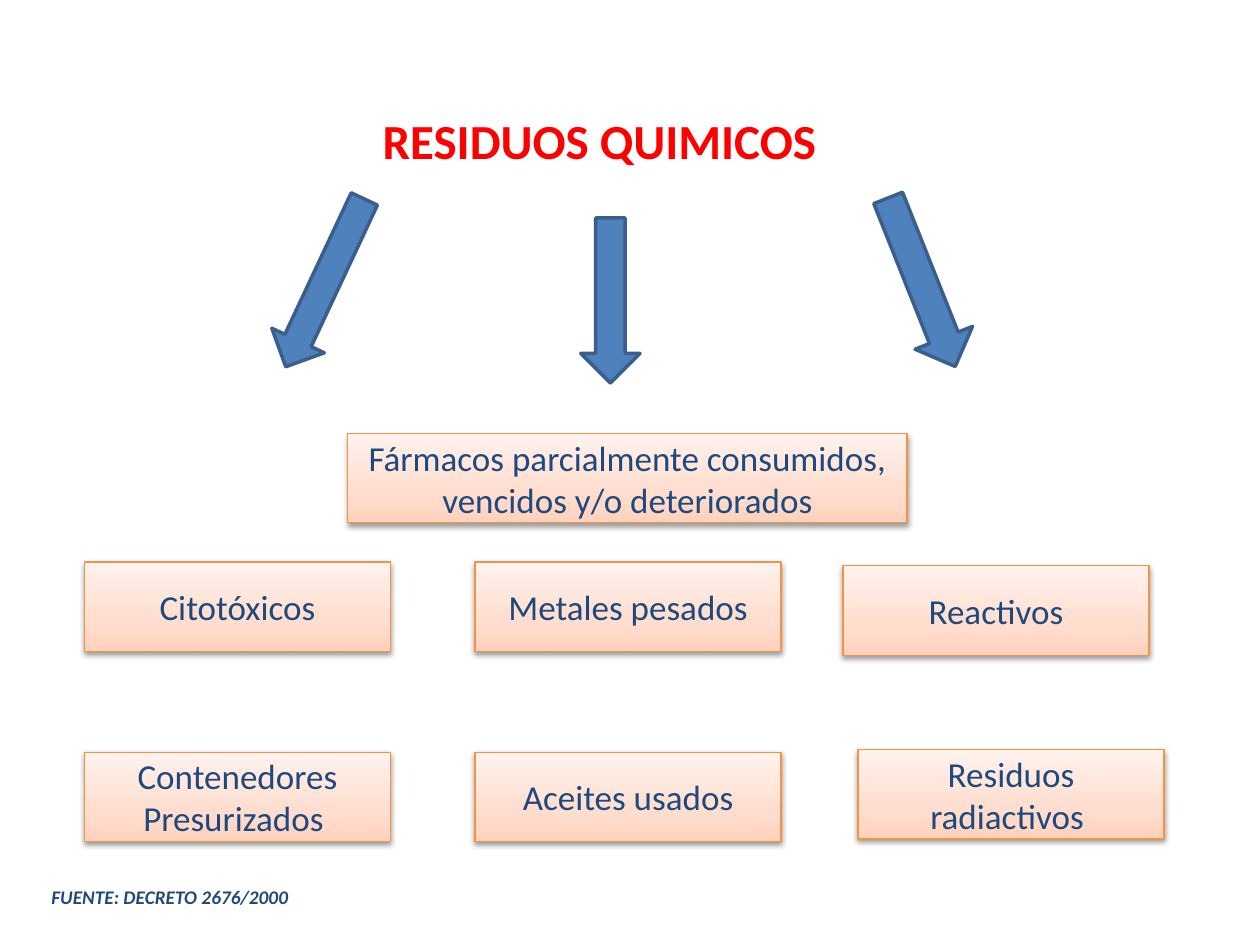
from typing import NamedTuple

from lxml import etree
from pptx import Presentation
from pptx import util as u
from pptx.dml.color import RGBColor
from pptx.enum import shapes, text
from pptx.oxml import parse_xml
from pptx.oxml.ns import nsdecls, qn

PX = 9144  # EMU per px, 100 px to the inch
FONT = "Calibri"
HEX = {
    "red": "FF0000", "navy": "1F497D", "blue": "4F81BD", "edge": "3A5F8C",
    "orange": "F69240", "low": "FFD2BD", "mid": "FFDED0", "high": "FFF2ED",
    "black": "000000",
}
STOPS = [(0, "low"), (35, "mid"), (100, "high")]
BOX_W, BOX_H = 243, 71


class Arrow(NamedTuple):
    x: int
    y: int
    w: int
    h: int
    turn: float = 0


class Box(NamedTuple):
    x: int
    y: int
    words: str
    w: int = BOX_W


class Label(NamedTuple):
    x: int
    y: int
    w: int
    h: int
    words: str
    size: int
    color: str
    align: text.PP_ALIGN
    slant: bool = False


ARROWS = [
    Arrow(235, 151, 46, 147, 25.1),
    Arrow(461, 173, 47, 131),
    Arrow(707, 152, 49, 144, 338.3),
]
BOXES = [
    Box(67, 446, "Citotóxicos"),
    Box(377, 446, "Metales pesados"),
    Box(669, 449, "Reactivos"),
    Box(67, 597, "Contenedores Presurizados "),
    Box(377, 597, "Aceites usados"),
    Box(681, 595, "Residuos radiactivos "),
    Box(276, 344, "Fármacos parcialmente consumidos, vencidos y/o deteriorados", 444),
]
TITLE = Label(169, 83, 622, 57, "RESIDUOS QUIMICOS ", 28, "red", text.PP_ALIGN.CENTER)
SOURCE = Label(31, 698, 953, 29, "FUENTE: DECRETO 2676/2000", 11, "navy",
               text.PP_ALIGN.LEFT, True)


def rgb(name: str) -> RGBColor:
    return RGBColor.from_string(HEX[name])


def scale(*px: int) -> list[int]:
    return [n * PX for n in px]


def write(frame, words: str, size: int, color: str, align: text.PP_ALIGN):
    """Fill a frame with one styled paragraph and return its font."""
    frame.word_wrap = True
    frame.text = words
    para = frame.paragraphs[0]
    para.alignment = align
    font = para.runs[0].font
    font.name, font.size = FONT, u.Pt(size)
    font.color.rgb = rgb(color)
    return font


def outline(shape, color: str, width: float) -> None:
    shape.line.color.rgb = rgb(color)
    shape.line.width = u.Pt(width)
    shape.shadow.inherit = False


def shade(shape) -> None:
    """Give a shape the upward three-stop gradient."""
    stops = "".join(
        f'<a:gs pos="{pos * 1000}"><a:srgbClr val="{HEX[name]}"/></a:gs>'
        for pos, name in STOPS)
    grad = parse_xml(
        f'<a:gradFill {nsdecls("a")} rotWithShape="1"><a:gsLst>{stops}</a:gsLst>'
        '<a:lin ang="16200000" scaled="0"/></a:gradFill>')
    shape.element.spPr.find(qn("a:prstGeom")).addnext(grad)


def cast(shape) -> None:
    """Add a soft shadow straight below a shape."""
    effects = shape.element.spPr.find(qn("a:effectLst"))
    outer = etree.SubElement(effects, qn("a:outerShdw"), blurRad="40000",
                             dist="20000", dir="5400000", rotWithShape="0")
    color = etree.SubElement(outer, qn("a:srgbClr"), val=HEX["black"])
    etree.SubElement(color, qn("a:alpha"), val="38000")


def draw_label(slide, item: Label) -> None:
    frame = slide.shapes.add_textbox(*scale(item.x, item.y, item.w, item.h)).text_frame
    font = write(frame, item.words, item.size, item.color, item.align)
    font.bold, font.italic = True, item.slant
    frame.auto_size = text.MSO_AUTO_SIZE.SHAPE_TO_FIT_TEXT


def draw_arrow(slide, item: Arrow) -> None:
    shape = slide.shapes.add_shape(shapes.MSO_SHAPE.DOWN_ARROW,
                                   *scale(item.x, item.y, item.w, item.h))
    shape.rotation = item.turn
    shape.fill.solid()
    shape.fill.fore_color.rgb = rgb("blue")
    outline(shape, "edge", 2)


def draw_box(slide, item: Box) -> None:
    shape = slide.shapes.add_shape(shapes.MSO_SHAPE.RECTANGLE,
                                   *scale(item.x, item.y, item.w, BOX_H))
    shade(shape)
    outline(shape, "orange", 0.75)
    cast(shape)
    shape.text_frame.vertical_anchor = text.MSO_ANCHOR.MIDDLE
    write(shape.text_frame, item.words, 20, "navy", text.PP_ALIGN.CENTER)


def main() -> None:
    deck = Presentation()
    deck.slide_width, deck.slide_height = scale(1000, 750)
    slide = deck.slides.add_slide(deck.slide_layouts[6])
    draw_label(slide, TITLE)
    for arrow in ARROWS:
        draw_arrow(slide, arrow)
    for box in BOXES:
        draw_box(slide, box)
    draw_label(slide, SOURCE)
    deck.save("out.pptx")


if __name__ == "__main__":
    main()
